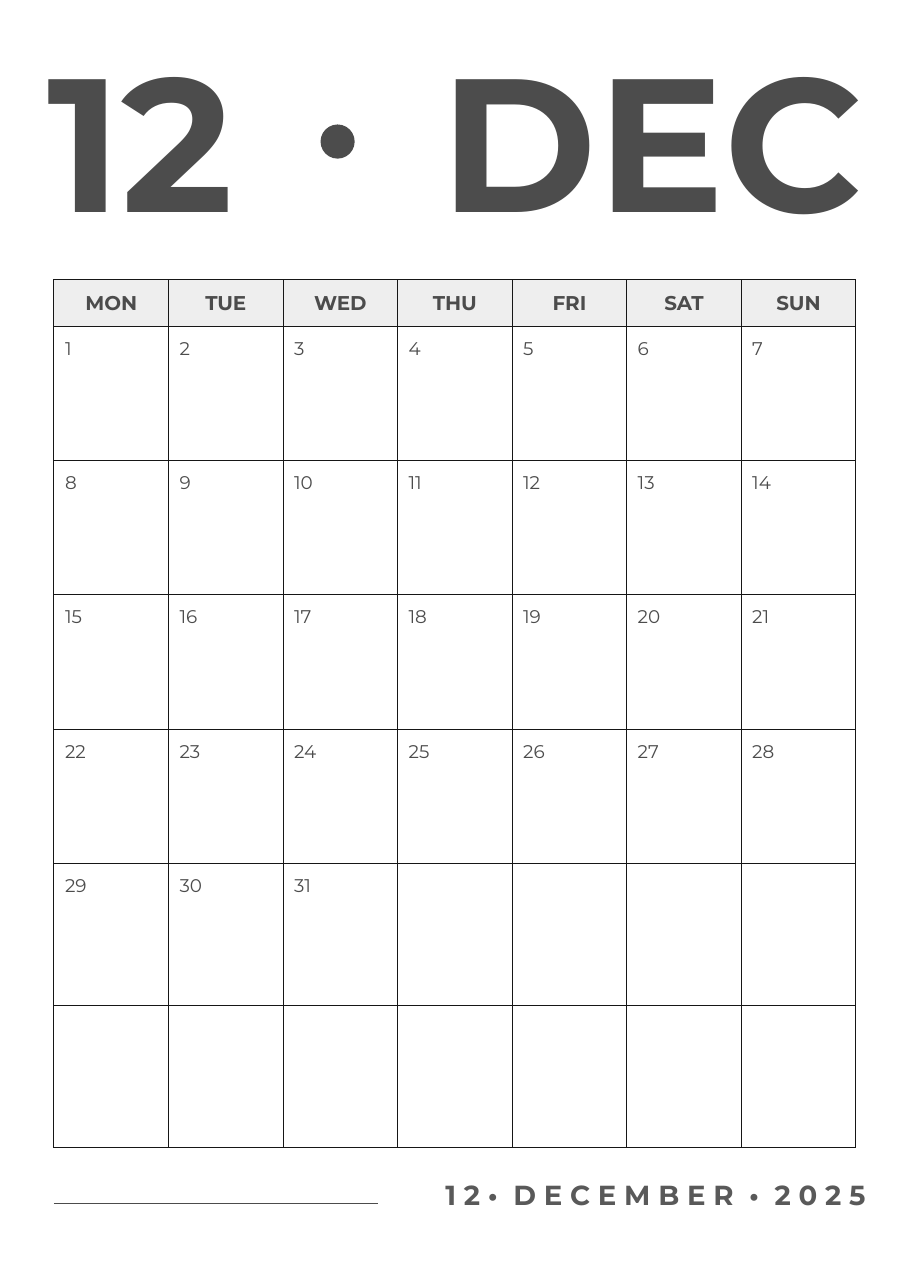
"""Build a one-page December 2025 wall calendar."""
from dataclasses import dataclass
from lxml.etree import SubElement
from pptx import Presentation
from pptx.dml.color import RGBColor
from pptx.enum.shapes import MSO_CONNECTOR, MSO_SHAPE
from pptx.enum.text import MSO_ANCHOR, PP_ALIGN
from pptx.oxml.ns import qn
from pptx.util import Inches, Pt

MONTH_NUMBER, MONTH_SHORT = "12", "DEC"
FOOTER = "1 2 •  D E C E M B E R  •  2 0 2 5"
WEEKDAYS = ["MON", "TUE", "WED", "THU", "FRI", "SAT", "SUN"]
DAYS_IN_MONTH, FIRST_WEEKDAY, WEEKS = 31, 0, 6


@dataclass(frozen=True)
class Theme:
    font: str = "Montserrat"
    ink: str = "4C4C4C"
    footer_ink: str = "595959"
    grid: str = "161616"
    header: str = "EEEEEE"
    paper: str = "FFFFFF"
    title_size: int = 124
    footer_size: int = 18
    weekday_size: int = 13
    day_size: int = 12
    rule: float = 0.75


THEME = Theme()
GRID_LEFT, GRID_TOP, COLUMN_WIDTH = 0.49, 2.54, 1.04
HEADER_HEIGHT, DAY_HEIGHT, SPARE_DAY_HEIGHT, NOTE_HEIGHT = 0.42, 0.41, 0.48, 0.81
FULL_WEEKS, CELL_PADDING = 4, 0.1


def color(value):
    return RGBColor.from_string(value)


def write(frame, text, size, ink=THEME.ink, bold=False, align=PP_ALIGN.LEFT):
    paragraph = frame.paragraphs[0]
    paragraph.text = text
    paragraph.alignment = align
    font = paragraph.font
    font.name, font.size, font.bold = THEME.font, Pt(size), bold
    font.color.rgb = color(ink)


def add_label(slide, text, box, size, ink=THEME.ink, align=PP_ALIGN.LEFT):
    frame = slide.shapes.add_textbox(*map(Inches, box)).text_frame
    frame.word_wrap = True
    frame.margin_left = frame.margin_top = frame.margin_right = frame.margin_bottom = 0
    write(frame, text, size, ink, True, align)


def style_cell(cell, fill, hidden_side=None):
    properties = cell._tc.get_or_add_tcPr()
    for side in ("lnL", "lnR", "lnT", "lnB"):
        border = SubElement(properties, qn(f"a:{side}"), w=str(Pt(THEME.rule)))
        if side == hidden_side:
            SubElement(border, qn("a:noFill"))
        else:
            solid = SubElement(border, qn("a:solidFill"))
            SubElement(solid, qn("a:srgbClr"), val=THEME.grid)
    cell.fill.solid()
    cell.fill.fore_color.rgb = color(fill)


def fill_cell(cell, text, size, **style):
    cell.margin_left = cell.margin_right = Inches(CELL_PADDING)
    cell.margin_top = cell.margin_bottom = Inches(CELL_PADDING)
    write(cell.text_frame, text, size, **style)


def add_calendar(slide):
    heights = [HEADER_HEIGHT]
    for week in range(WEEKS):
        heights += [DAY_HEIGHT if week < FULL_WEEKS else SPARE_DAY_HEIGHT, NOTE_HEIGHT]
    columns = len(WEEKDAYS)
    calendar = slide.shapes.add_table(
        len(heights), columns, Inches(GRID_LEFT), Inches(GRID_TOP),
        Inches(COLUMN_WIDTH * columns), Inches(sum(heights))).table
    calendar.first_row = calendar.horz_banding = False
    for row, height in zip(calendar.rows, heights):
        row.height = Inches(height)
    for column, weekday in enumerate(WEEKDAYS):
        calendar.columns[column].width = Inches(COLUMN_WIDTH)
        heading = calendar.cell(0, column)
        style_cell(heading, THEME.header)
        heading.vertical_anchor = MSO_ANCHOR.MIDDLE
        fill_cell(heading, weekday, THEME.weekday_size, bold=True, align=PP_ALIGN.CENTER)
        for week in range(WEEKS):
            day_cell = calendar.cell(1 + 2 * week, column)
            style_cell(day_cell, THEME.paper, "lnB")
            style_cell(calendar.cell(2 + 2 * week, column), THEME.paper, "lnT")
            day = week * columns + column + 1 - FIRST_WEEKDAY
            if 1 <= day <= DAYS_IN_MONTH:
                fill_cell(day_cell, str(day), THEME.day_size)


def add_title(slide):
    add_label(slide, MONTH_NUMBER, (0.43, 0.21, 2.69, 2.09), THEME.title_size)
    add_label(slide, MONTH_SHORT, (3.5, 0.21, 4.34, 2.09), THEME.title_size,
              align=PP_ALIGN.RIGHT)
    dot = slide.shapes.add_shape(
        MSO_SHAPE.OVAL, Inches(2.91), Inches(1.13), Inches(0.31), Inches(0.31))
    dot.shadow.inherit = False
    dot.fill.solid()
    dot.fill.fore_color.rgb = color(THEME.ink)
    dot.line.fill.background()


def add_footer(slide):
    rule = slide.shapes.add_connector(
        MSO_CONNECTOR.STRAIGHT, Inches(GRID_LEFT), Inches(10.92), Inches(3.43), Inches(10.92))
    rule.line.color.rgb = color(THEME.ink)
    rule.line.width = Pt(THEME.rule)
    SubElement(rule._element.spPr, qn("a:effectLst"))
    add_label(slide, FOOTER, (3.52, 10.69, 4.34, 0.3), THEME.footer_size,
              THEME.footer_ink, PP_ALIGN.RIGHT)


def main():
    deck = Presentation()
    deck.slide_width, deck.slide_height = Inches(8.27), Inches(11.69)
    slide = deck.slides.add_slide(deck.slide_layouts[6])
    slide.background.fill.solid()
    slide.background.fill.fore_color.rgb = color(THEME.paper)
    add_calendar(slide)
    add_footer(slide)
    add_title(slide)
    deck.save("out.pptx")


if __name__ == "__main__":
    main()
